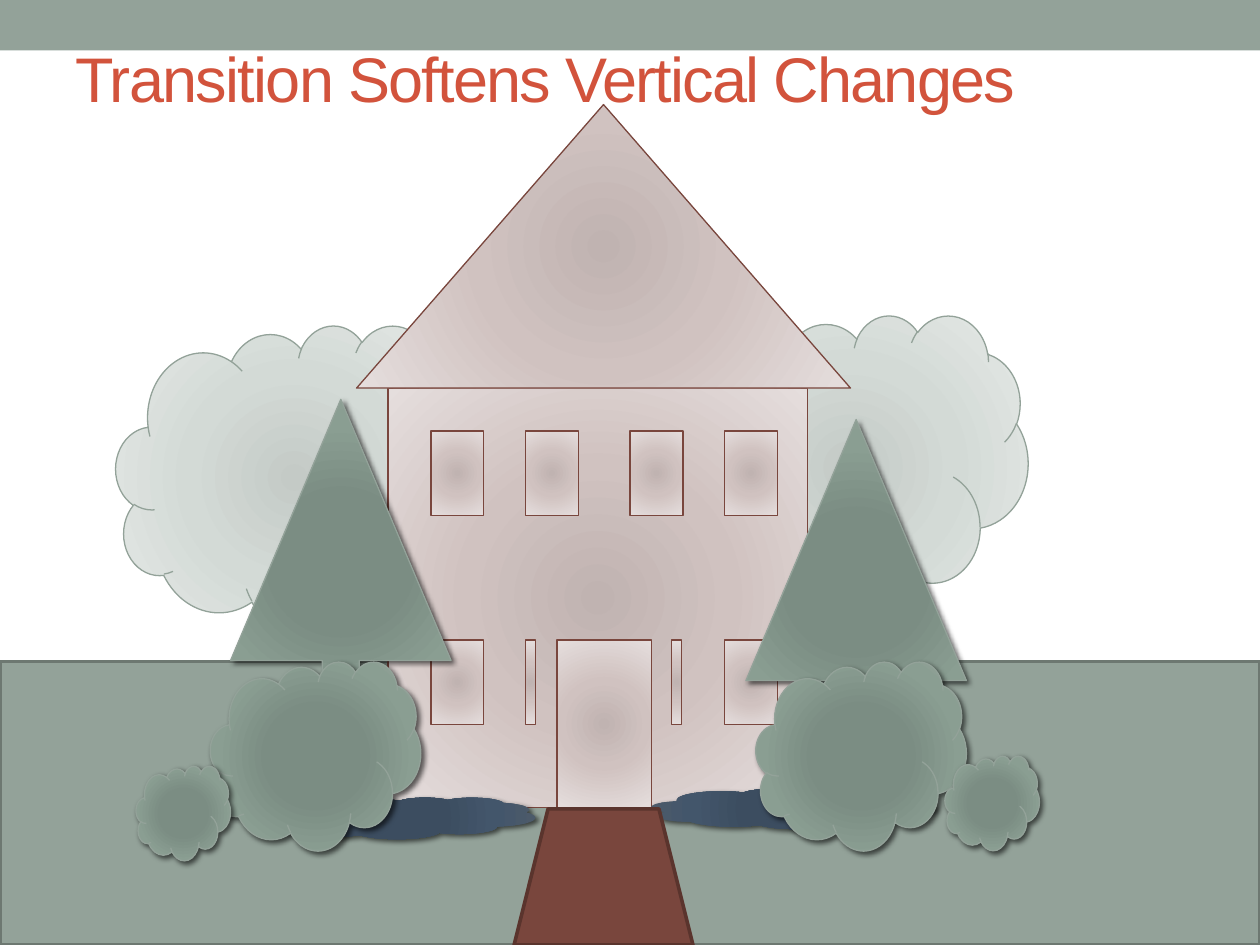
from lxml import etree
from pptx import Presentation
from pptx.dml.color import RGBColor
from pptx.enum.shapes import MSO_SHAPE as Shape
from pptx.enum.text import MSO_ANCHOR as Anchor, PP_ALIGN as Align
from pptx.oxml import parse_xml
from pptx.oxml.ns import nsdecls, qn
from pptx.util import Inches, Pt

SAGE = "93A299"
BRICK = "79463D"
PALE_LEAF = [(0, "C4CAC6"), (45, "D3DAD6"), (100, "E7EAE8")]
WALL = [(0, "C0B3B1"), (45, "D0C2C0"), (100, "E5DEDD")]
FLOWER = [(0, "3B4D61"), (34, "3C4D60"), (70, "43566B"), (100, "4C5A6A")]
LEAF = [(0, "7B8E82"), (34, "7B8D83"), (70, "8A9E92"), (100, SAGE)]


def rgb(value):
    return RGBColor.from_string(value)


def set_radial_fill(shape, stops):
    shape.fill.background()
    stop_xml = "".join(
        f'<a:gs pos="{position * 1000}"><a:srgbClr val="{color}"/></a:gs>'
        for position, color in stops
    )
    gradient = parse_xml(
        f'<a:gradFill {nsdecls("a")} rotWithShape="1"><a:gsLst>{stop_xml}</a:gsLst>'
        '<a:path path="circle"><a:fillToRect l="100000" t="100000" r="100000" b="100000"/>'
        "</a:path></a:gradFill>"
    )
    properties = shape._element.spPr
    properties.replace(properties.find(qn("a:noFill")), gradient)


def add_shadow(shape):
    effects = shape._element.spPr.find(qn("a:effectLst"))
    shadow = etree.SubElement(
        effects, qn("a:outerShdw"), blurRad=str(Pt(3)), dist=str(Pt(2)),
        dir=str(45 * 60000), algn="tl", rotWithShape="0",
    )
    color = etree.SubElement(shadow, qn("a:srgbClr"), val="000000")
    etree.SubElement(color, qn("a:alpha"), val="60000")


def add_part(slide, kind, box, fill, line=None, line_width=0.75, shadow=False):
    shape = slide.shapes.add_shape(kind, *(Inches(length) for length in box))
    shape.shadow.inherit = False
    if isinstance(fill, str):
        shape.fill.solid()
        shape.fill.fore_color.rgb = rgb(fill)
    else:
        set_radial_fill(shape, fill)
    if line:
        shape.line.color.rgb = rgb(line)
        shape.line.width = Pt(line_width)
    else:
        shape.line.fill.background()
    if shadow:
        add_shadow(shape)
    return shape


def add_title(slide, box, text):
    title = slide.shapes.title
    title.left, title.top, title.width, title.height = (Inches(length) for length in box)
    frame = title.text_frame
    frame.text = text
    frame.word_wrap = True
    frame.vertical_anchor = Anchor.MIDDLE
    paragraph = frame.paragraphs[0]
    paragraph.alignment = Align.LEFT
    run = paragraph.runs[0]
    run.font.name = "Arial"
    run.font.size = Pt(36)
    run.font.color.rgb = rgb("D2533C")
    run._r.get_or_add_rPr().set("spc", "-100")
    slide.shapes._spTree.append(title._element)


def add_house(slide, box):
    left, top, width, height = box
    roof_height, eave, wall_size = 2.25, 0.25, 3.33
    wall_left, wall_top = left + eave, top + roof_height

    def add_masonry(kind, part_box):
        add_part(slide, kind, part_box, WALL, BRICK)

    add_masonry(Shape.RECTANGLE, (wall_left, wall_top, wall_size, height - roof_height))
    add_masonry(Shape.ISOSCELES_TRIANGLE, (left, top, width, roof_height))

    upper, lower = wall_top + 0.34, wall_top + 2
    window_width, window_height, sidelight_width = 0.42, 0.67, 0.08
    for offset in (0.34, 1.09, 1.92, 2.67):
        add_masonry(Shape.RECTANGLE, (wall_left + offset, upper, window_width, window_height))
    for offset in (0.34, 2.67):
        add_masonry(Shape.RECTANGLE, (wall_left + offset, lower, window_width, window_height))
    for offset in (1.09, 2.25):
        add_masonry(Shape.RECTANGLE, (wall_left + offset, lower, sidelight_width, window_height))
    add_masonry(Shape.RECTANGLE, (wall_left + 1.34, lower, 0.75, 1.33))


def add_pine(slide, box):
    pine = add_part(slide, Shape.DOWN_ARROW, box, LEAF, SAGE, shadow=True)
    pine.adjustments[0] = 0.168
    pine.adjustments[1] = 1.184
    pine._element.spPr.find(qn("a:xfrm")).set("flipV", "1")


def add_bush(slide, box):
    add_part(slide, Shape.CLOUD, box, LEAF, SAGE, shadow=True)


def add_background(slide, box):
    left, top, width, height = box
    lawn_top = 5.25
    add_part(slide, Shape.RECTANGLE, (left, top, width, 0.4), SAGE)
    for tree_left, tree_top in ((5.33, 2.5), (0.92, 2.58)):
        tree_box = (left + tree_left, top + tree_top, 2.83, 2.42)
        add_part(slide, Shape.CLOUD, tree_box, PALE_LEAF, SAGE)
    lawn_box = (left, top + lawn_top, width, height - lawn_top)
    add_part(slide, Shape.RECTANGLE, lawn_box, SAGE, "6D7871", 2.08)


def add_garden(slide, box):
    left, top, width, height = box
    for bed_left, bed_top in ((4.09, 3.08), (0.92, 3.16)):
        bed_box = (left + bed_left, top + bed_top, 2.25, 0.33)
        add_part(slide, Shape.CLOUD, bed_box, FLOWER, shadow=True)
    for pine_left, pine_top, bush_left in ((0.75, 0, 0.59), (4.84, 0.16, 4.92)):
        add_pine(slide, (left + pine_left, top + pine_top, 1.75, 2.58))
        add_bush(slide, (left + bush_left, top + 2.08, 1.67, 1.5))
    small = 0.75
    add_bush(slide, (left + width - small, top + 2.83, small, small))
    add_bush(slide, (left, top + height - small, small, small))


def add_walkway(slide, box):
    add_part(slide, Shape.TRAPEZOID, box, BRICK, "5A342D", 2.08)


def main():
    presentation = Presentation()
    presentation.slide_width = Inches(10)
    presentation.slide_height = Inches(7.5)
    slide = presentation.slides.add_slide(presentation.slide_layouts[5])
    add_background(slide, (0, 0, 10, 7.5))
    add_house(slide, (2.83, 0.83, 3.92, 5.58))
    add_garden(slide, (1.08, 3.17, 7.17, 3.66))
    add_walkway(slide, (4.08, 6.42, 1.42, 1.08))
    add_title(slide, (0.5, 0.3, 8.17, 0.62), "Transition Softens Vertical Changes")
    presentation.save("out.pptx")


if __name__ == "__main__":
    main()
